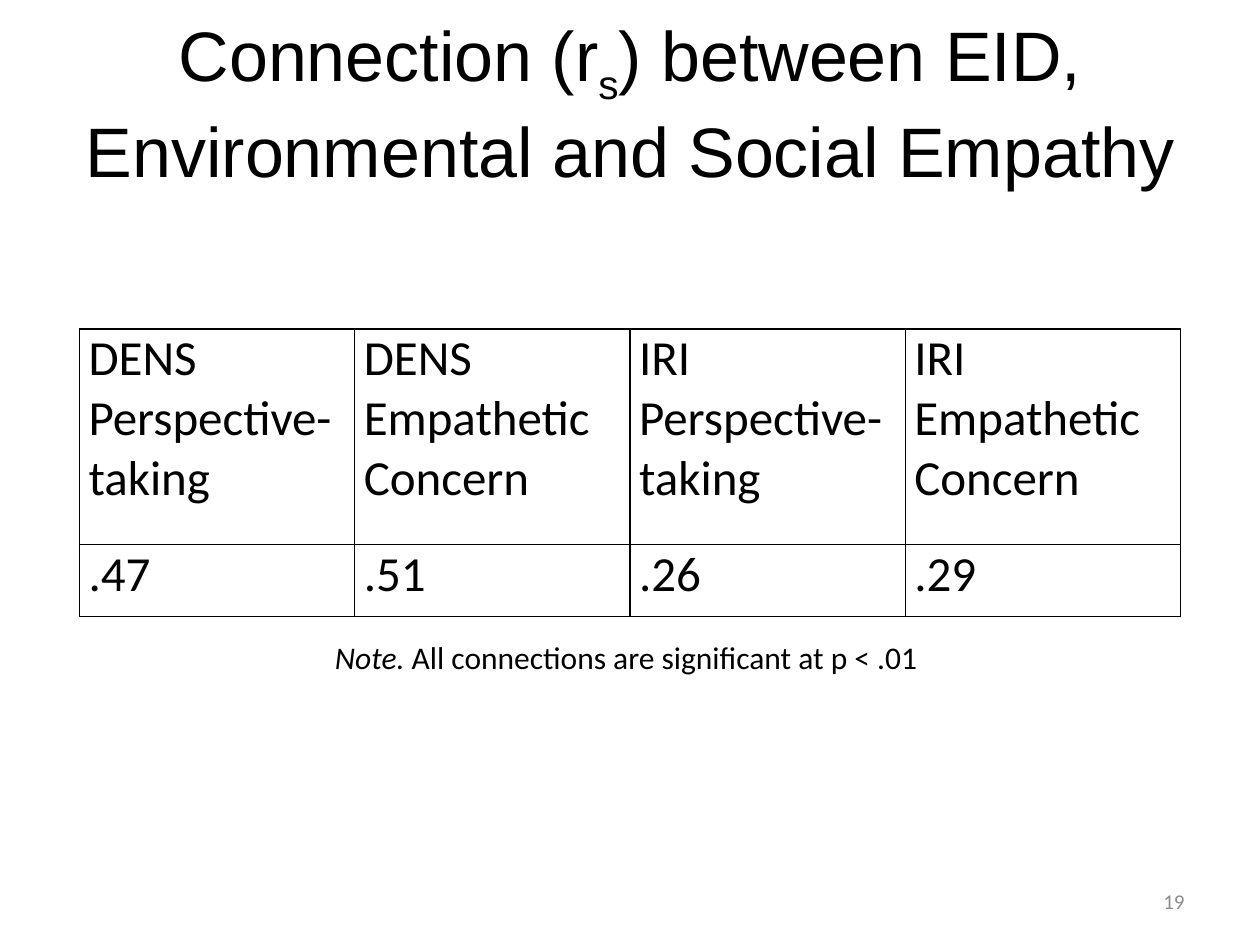
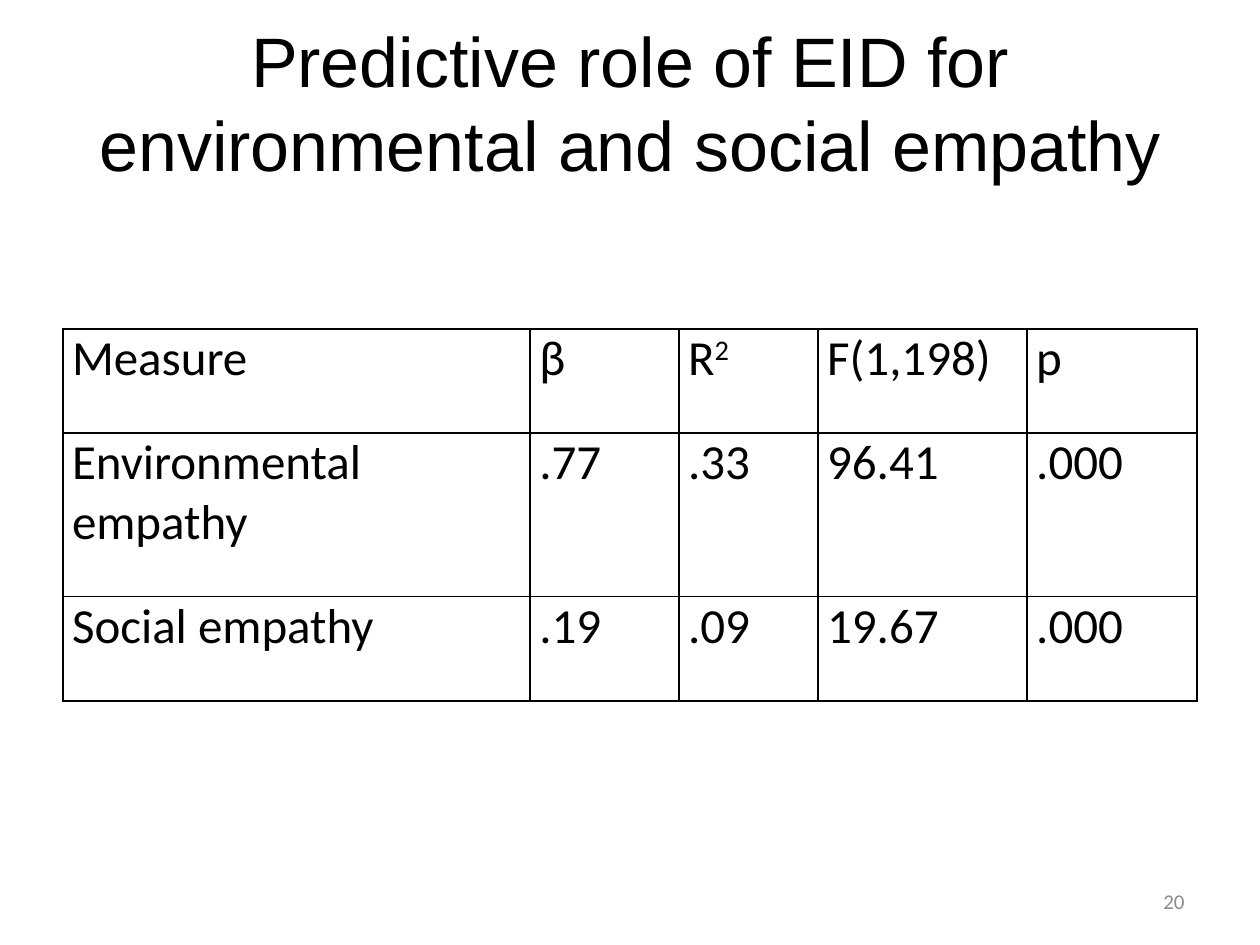
from lxml import etree
from pptx import Presentation
from pptx.dml.color import RGBColor
from pptx.enum.text import MSO_ANCHOR, PP_ALIGN
from pptx.oxml.ns import qn
from pptx.util import Pt

SLIDES = [
    {
        "title": ["Connection (r", ("s", {"baseline": -25}),
                  ") between EID, Environmental and Social Empathy"],
        "number": "19",
        "columns": [157.3] * 4,
        "rows": [123.2, 41],
        "cells": [
            ["DENS Perspective-taking", "DENS Empathetic Concern",
             "IRI Perspective-taking", "IRI Empathetic Concern"],
            [".47", ".51", ".26", ".29"],
        ],
        "note": [("Note.", {"italic": True}), " All connections are significant at p < .01"],
    },
    {
        "title": ["Predictive role of EID for environmental and social empathy"],
        "number": "20",
        "columns": [267, 85, 79.5, 119.5, 97],
        "rows": [59.5, 93.5, 59.5],
        "cells": [
            ["Measure", "β", ["R", ("2", {"baseline": 30})], "F(1,198)", "p"],
            ["Environmental empathy", ".77", ".33", "96.41", ".000"],
            ["Social empathy", ".19", ".09", "19.67", ".000"],
        ],
    },
]

BLACK = RGBColor(0, 0, 0)
WHITE = RGBColor(255, 255, 255)
GRAY = RGBColor(0x8C, 0x8C, 0x8C)
LEFT, CENTER, RIGHT = PP_ALIGN.LEFT, PP_ALIGN.CENTER, PP_ALIGN.RIGHT
TOP, MIDDLE = MSO_ANCHOR.TOP, MSO_ANCHOR.MIDDLE

SLIDE_W, SLIDE_H = 720, 540
TITLE_BOX = (36, 21.6, 648, 72.7)
NUMBER_BOX = (516, 500.4, 168, 28.8)
NOTE_BOX = (184.3, 361, 351.4, 29)
TABLE_TOP = 188
CELL_INSET = 5.2
BORDER_WIDTH = 1


def write(frame, content, size, font="Calibri", color=BLACK, align=LEFT):
    paragraph = frame.paragraphs[0]
    paragraph.alignment = align
    for part in [content] if isinstance(content, str) else content:
        words, style = (part, {}) if isinstance(part, str) else part
        run = paragraph.add_run()
        run.text = words
        run.font.size = Pt(size)
        run.font.name = font
        run.font.color.rgb = color
        run.font.italic = style.get("italic")
        if "baseline" in style:
            run.font._element.set("baseline", str(style["baseline"] * 1000))


def add_text(slide, box, content, size, anchor=MIDDLE, wrap=True, **style):
    frame = slide.shapes.add_textbox(*map(Pt, box)).text_frame
    frame.word_wrap = wrap
    frame.vertical_anchor = anchor
    write(frame, content, size, **style)


def add_borders(cell):
    properties = cell._tc.get_or_add_tcPr()
    for index, side in enumerate(("a:lnL", "a:lnR", "a:lnT", "a:lnB")):
        line = etree.Element(qn(side), w=str(Pt(BORDER_WIDTH)))
        fill = etree.SubElement(line, qn("a:solidFill"))
        etree.SubElement(fill, qn("a:srgbClr"), val=str(BLACK))
        properties.insert(index, line)


def add_results(slide, columns, rows, cells):
    width = sum(columns)
    box = ((SLIDE_W - width) / 2, TABLE_TOP, width, sum(rows))
    results = slide.shapes.add_table(len(rows), len(columns), *map(Pt, box)).table
    results.first_row = results.horz_banding = False
    for column, column_width in zip(results.columns, columns):
        column.width = Pt(column_width)
    for row, height, contents in zip(results.rows, rows, cells):
        row.height = Pt(height)
        for cell, content in zip(row.cells, contents):
            cell.margin_left = cell.margin_right = Pt(CELL_INSET)
            cell.margin_top = cell.margin_bottom = Pt(0)
            cell.fill.solid()
            cell.fill.fore_color.rgb = WHITE
            write(cell.text_frame, content, 28)
            add_borders(cell)


def main():
    deck = Presentation()
    deck.slide_width, deck.slide_height = Pt(SLIDE_W), Pt(SLIDE_H)
    for page in SLIDES:
        slide = deck.slides.add_slide(deck.slide_layouts[6])
        add_text(slide, TITLE_BOX, page["title"], 40, font="Arial", align=CENTER)
        add_text(slide, NUMBER_BOX, page["number"], 12, color=GRAY, align=RIGHT)
        add_results(slide, page["columns"], page["rows"], page["cells"])
        if "note" in page:
            add_text(slide, NOTE_BOX, page["note"], 18, anchor=TOP, wrap=False)
    deck.save("out.pptx")


if __name__ == "__main__":
    main()
